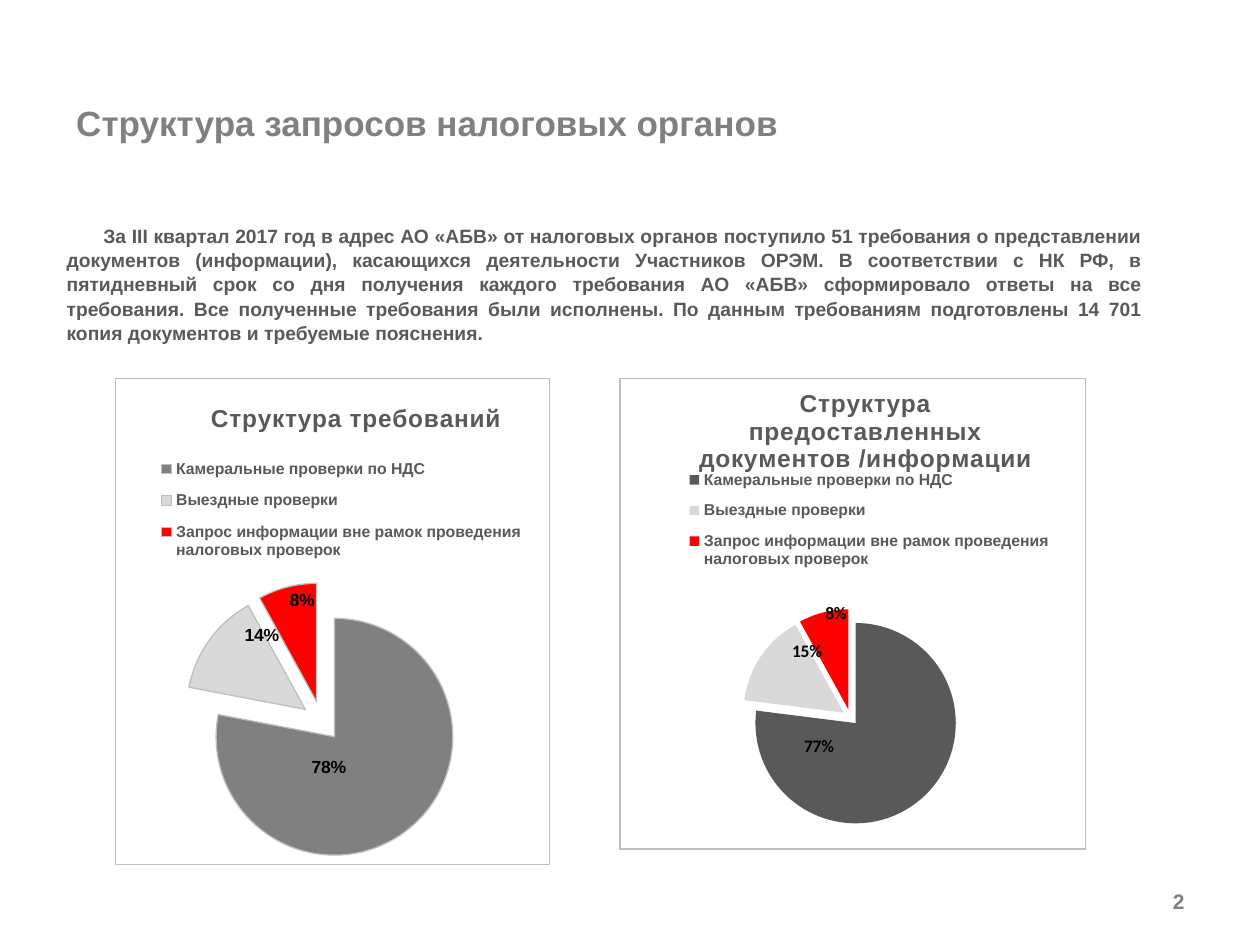
from dataclasses import dataclass
from lxml import etree
from pptx import Presentation
from pptx.chart.data import CategoryChartData
from pptx.dml.color import RGBColor
from pptx.enum.chart import XL_CHART_TYPE, XL_LABEL_POSITION, XL_LEGEND_POSITION
from pptx.enum.text import MSO_ANCHOR, PP_ALIGN
from pptx.oxml import parse_xml
from pptx.oxml.ns import nsdecls, qn
from pptx.util import Pt


@dataclass(frozen=True)
class Theme:
    font: str = "Arial"
    label_font: str = "Calibri"
    text: RGBColor = RGBColor.from_string("595959")
    heading: RGBColor = RGBColor.from_string("808080")
    number: RGBColor = RGBColor.from_string("7F7F7F")
    black: RGBColor = RGBColor.from_string("000000")
    light: RGBColor = RGBColor.from_string("D9D9D9")
    red: RGBColor = RGBColor.from_string("FF0000")
    border: RGBColor = RGBColor.from_string("BFBFBF")
    heading_size: int = 20
    body_size: int = 11
    number_size: int = 12
    chart_title_size: int = 14
    label_size: int = 10
    legend_size: int = 9


T = Theme()


def style(font, size, color, name=T.font):
    font.size, font.bold, font.name = Pt(size), True, name
    font.color.rgb = color


def set_layout(parent, index, edge, **values):
    for old in parent.findall(qn("c:layout")):
        parent.remove(old)
    layout = parse_xml(f"<c:layout {nsdecls('c')}><c:manualLayout/></c:layout>")
    modes = {}
    if edge:
        modes = {"xMode": "edge", "yMode": "edge"}
    if edge == "inner":
        modes = {"layoutTarget": "inner", **modes}
    for tag, value in {**modes, **values}.items():
        etree.SubElement(layout[0], qn(f"c:{tag}")).set("val", str(value))
    parent.insert(index, layout)


prs = Presentation()
prs.slide_width, prs.slide_height = Pt(720), Pt(540)
s = prs.slides.add_slide(prs.slide_layouts[6])

body = (
    "За III квартал 2017 год в адрес АО «АБВ» от налоговых органов поступило "
    "51 требования о представлении документов (информации), касающихся "
    "деятельности Участников ОРЭМ. В соответствии с НК РФ, в пятидневный срок "
    "со дня получения каждого требования АО «АБВ» сформировало ответы на все "
    "требования. Все полученные требования были исполнены. По данным "
    "требованиям подготовлены 14 701 копия документов и требуемые пояснения."
)
texts = [
    ("Структура запросов налоговых органов", (36.5, 54.5, 629, 53),
     T.heading_size, T.heading, PP_ALIGN.LEFT, MSO_ANCHOR.TOP),
    (body, (31, 117, 629, 90), T.body_size, T.text, PP_ALIGN.JUSTIFY, MSO_ANCHOR.MIDDLE),
    ("2", (516, 500.5, 168, 29), T.number_size, T.number, PP_ALIGN.RIGHT, MSO_ANCHOR.MIDDLE),
]
for text, box, size, color, align, anchor in texts:
    tf = s.shapes.add_textbox(*map(Pt, box)).text_frame
    tf.word_wrap, tf.vertical_anchor = True, anchor
    p = tf.paragraphs[0]
    p.text, p.alignment = text, align
    if text == body:
        p.line_spacing = 1.05
        p._p.get_or_add_pPr().set("indent", str(Pt(21)))
    style(p.font, size, color)

categories = [
    "Камеральные проверки по НДС",
    "Выездные проверки",
    "Запрос информации вне рамок проведения налоговых проверок",
]
pies = [
    dict(title="Структура требований", box=(65.5, 216, 249, 278.5), values=(78, 14, 8),
         main=T.heading, outlined=True, explosion=17, label_font=T.font,
         title_at=dict(x=0.21, y=0.04),
         legend_at=dict(x=0.08, y=0.14, w=0.88, h=0.26),
         plot_at=dict(x=0.02, y=0.42, w=0.91, h=0.57),
         shifts=[(-0.1, -0.03), (0.01, -0.08), (0, -0.09)]),
    dict(title="Структура предоставленных документов /информации",
         box=(354, 216, 266.5, 269.5), values=(77, 15, 8),
         main=T.text, outlined=False, explosion=8, label_font=T.label_font,
         title_at=dict(x=0.16, y=0.01),
         legend_at=dict(x=0.11, y=0.17, w=0.85, h=0.26),
         plot_at=dict(x=0.08, y=0.49, w=0.83, h=0.46),
         shifts=[(-0.15, -0.03), (0.01, -0.07), (0, -0.1)]),
]
for pie in pies:
    data = CategoryChartData()
    data.categories = categories
    data.add_series("Series 1", pie["values"])
    chart = s.shapes.add_chart(XL_CHART_TYPE.PIE, *map(Pt, pie["box"]), data).chart
    style(chart.font, T.label_size, T.text)
    chart.element.find(qn("c:txPr")).addprevious(parse_xml(
        f'<c:spPr {nsdecls("c", "a")}><a:noFill/><a:ln w="{Pt(0.75)}"><a:solidFill>'
        f'<a:srgbClr val="{T.border}"/></a:solidFill></a:ln></c:spPr>'))

    chart.has_title = True
    p = chart.chart_title.text_frame.paragraphs[0]
    r = p.add_run()
    r.text = pie["title"]
    style(p.font, T.chart_title_size, T.text)
    style(r.font, T.chart_title_size, T.text)
    r.font._element.set("spc", "30")
    chart.chart_title.include_in_layout = False
    set_layout(chart.element.find(".//" + qn("c:title")), 1, "edge", **pie["title_at"])

    chart.has_legend = True
    chart.legend.position = XL_LEGEND_POSITION.TOP
    chart.legend.include_in_layout = not pie["outlined"]
    style(chart.legend.font, T.legend_size, T.text)
    set_layout(chart.element.find(".//" + qn("c:legend")), 1, "edge", **pie["legend_at"])
    set_layout(chart.element.find(".//" + qn("c:plotArea")), 0, "inner", **pie["plot_at"])

    plot = chart.plots[0]
    plot.vary_by_categories = True
    series = plot.series[0]
    series.format.line.fill.background()
    series.format.fill.solid()
    series.format.fill.fore_color.rgb = pie["main"]
    series._element.find(qn("c:spPr")).addnext(parse_xml(
        f'<c:explosion {nsdecls("c")} val="{pie["explosion"]}"/>'))
    labels = series.data_labels
    labels.show_percentage, labels.show_value = True, False
    labels.position = XL_LABEL_POSITION.CENTER
    style(labels.font, T.label_size, T.black, pie["label_font"])
    for i, color in enumerate((pie["main"], T.light, T.red)):
        point = series.points[i]
        point.format.fill.solid()
        point.format.fill.fore_color.rgb = color
        if pie["outlined"]:
            point.format.line.color.rgb = T.border
            point.format.line.width = Pt(0.75)
        else:
            point.format.line.fill.background()
        label = point.data_label
        style(label.font, T.label_size, T.black, pie["label_font"])
        label.position = XL_LABEL_POSITION.CENTER
    for label, (x, y) in zip(series._element.iter(qn("c:dLbl")), pie["shifts"]):
        label.find(qn("c:showVal")).set("val", "0")
        label.find(qn("c:showPercent")).set("val", "1")
        set_layout(label, 1, None, x=x, y=y)

prs.save("out.pptx")
